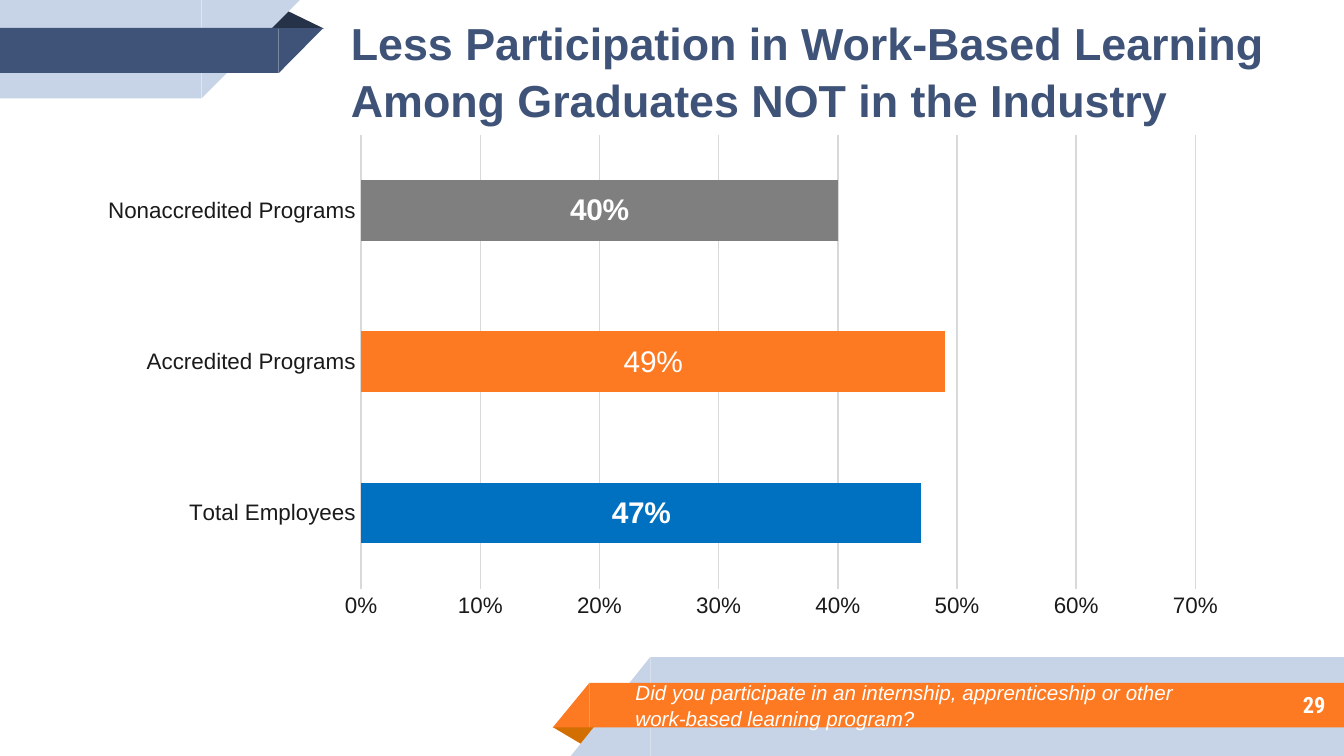
from lxml.etree import SubElement
from pptx import Presentation
from pptx.chart.data import CategoryChartData
from pptx.dml.color import RGBColor
from pptx.enum.chart import XL_CHART_TYPE as ChartType, XL_LABEL_POSITION as LabelPosition
from pptx.enum.chart import XL_TICK_MARK as TickMark
from pptx.enum.shapes import MSO_SHAPE as Preset
from pptx.enum.text import MSO_ANCHOR as Anchor, MSO_AUTO_SIZE as AutoSize, PP_ALIGN as Align
from pptx.oxml.ns import qn
from pptx.util import Cm, Pt

NAVY = RGBColor(0x3F, 0x53, 0x78)
DARK_NAVY = RGBColor(0x26, 0x32, 0x48)
PALE_BLUE = RGBColor(0xC7, 0xD3, 0xE6)
ORANGE = RGBColor(0xFD, 0x7A, 0x22)
DARK_ORANGE = RGBColor(0xD2, 0x6F, 0x00)
BLUE = RGBColor(0x00, 0x70, 0xC0)
GRAY = RGBColor(0x7F, 0x7F, 0x7F)
GRID = RGBColor(0xD9, 0xD9, 0xD9)
INK = RGBColor(0x1A, 0x1A, 0x1A)
WHITE = RGBColor(0xFF, 0xFF, 0xFF)

TITLE = "Less Participation in Work-Based Learning\vAmong Graduates NOT in the Industry"
QUESTION = "Did you participate in an internship, apprenticeship or other work-based learning program?"
PAGE_NUMBER = "29"
RESULTS = [
    ("Total Employees", 0.47, BLUE),
    ("Accredited Programs", 0.49, ORANGE),
    ("Nonaccredited Programs", 0.40, GRAY),
]
PLAIN_LABELS = {1: "49%"}
PLOT_LAYOUT = {"x": 0.24, "y": 0.02, "w": 0.72, "h": 0.9}

RECT, CORNER, FOLD = Preset.RECTANGLE, Preset.RIGHT_TRIANGLE, Preset.ISOSCELES_TRIANGLE
BOTTOM_RIBBON = [
    (FOLD, 10.44, 13.74, 0.89, 0.36, DARK_ORANGE, 180, False),
    (RECT, 12.29, 12.42, 13.11, 1.87, PALE_BLUE, 0, False),
    (CORNER, 10.79, 12.42, 1.5, 1.87, PALE_BLUE, 0, True),
    (RECT, 11.14, 12.91, 14.26, 0.84, ORANGE, 0, False),
    (CORNER, 10.45, 12.91, 0.69, 0.84, ORANGE, 0, True),
]
TOP_RIBBON = [
    (FOLD, 5.03, 0.18, 1.09, 0.36, DARK_NAVY, 0, False),
    (RECT, 0, 0, 3.81, 1.86, PALE_BLUE, 0, False),
    (CORNER, 3.81, 0, 1.86, 1.86, PALE_BLUE, 180, True),
    (RECT, 0, 0.53, 5.27, 0.85, NAVY, 0, False),
    (CORNER, 5.27, 0.53, 0.84, 0.85, NAVY, 180, True),
]


def place(shape, left, top, width, height):
    shape.left, shape.top, shape.width, shape.height = map(Cm, (left, top, width, height))


def set_font(font, color, **formats):
    font.color.rgb = color
    for name, value in formats.items():
        setattr(font, name, value)


def draw_ribbon(slide, pieces):
    group = slide.shapes.add_group_shape()
    for preset, left, top, width, height, color, rotation, flipped in pieces:
        shape = group.shapes.add_shape(preset, *map(Cm, (left, top, width, height)))
        shape.shadow.inherit = False
        shape.fill.solid()
        shape.fill.fore_color.rgb = color
        shape.line.fill.background()
        shape.rotation = rotation
        if flipped:
            shape.element.spPr.find(qn("a:xfrm")).set("flipH", "1")
        if preset == FOLD:
            shape.adjustments[0] = 0.32


def write_text(shape, text, color, align=Align.LEFT, spacing=1.0, **formats):
    frame = shape.text_frame
    frame_formats = {"word_wrap": True, "auto_size": AutoSize.NONE, "vertical_anchor": Anchor.MIDDLE}
    for side in ("left", "right", "top", "bottom"):
        frame_formats[f"margin_{side}"] = Cm(0.25)
    for name, value in frame_formats.items():
        setattr(frame, name, value)
    frame.text = text
    paragraph = frame.paragraphs[0]
    properties = paragraph._p.get_or_add_pPr()
    properties.set("marL", "0")
    properties.set("indent", "0")
    SubElement(properties, qn("a:buNone"))
    paragraph.alignment = align
    paragraph.space_before = Pt(0)
    paragraph.line_spacing = spacing
    for run in paragraph.runs:
        set_font(run.font, color, **formats)


def draw_chart(slide):
    data = CategoryChartData(number_format="0%")
    data.categories = [name for name, _, _ in RESULTS]
    data.add_series("Series 1", [value for _, value, _ in RESULTS])
    frame = slide.shapes.add_chart(
        ChartType.BAR_STACKED, *map(Cm, (1.57, 2.36, 21.9, 9.53)), data)
    chart = frame.chart
    chart.has_legend = chart.has_title = False
    set_font(chart.font, INK, size=Pt(10), name="Arial")

    plot = chart.plots[0]
    plot.gap_width, plot.overlap, plot.vary_by_categories = 150, 100, False
    series = plot.series[0]
    series.format.fill.solid()
    series.format.fill.fore_color.rgb = GRAY
    for index, (_, _, color) in enumerate(RESULTS):
        fill = series.points[index].format.fill
        fill.solid()
        fill.fore_color.rgb = color

    labels = series.data_labels
    labels.show_value = True
    labels.number_format, labels.number_format_is_linked = "0%", False
    labels.position = LabelPosition.CENTER
    set_font(labels.font, WHITE, size=Pt(16), bold=True, name="Arial")
    for index, text in PLAIN_LABELS.items():
        label = series.points[index].data_label
        label.text_frame.text = text
        label.position = LabelPosition.CENTER
        run = label.text_frame.paragraphs[0].runs[0]
        set_font(run.font, WHITE, size=Pt(16), bold=False, name="Arial")

    category_axis, value_axis = chart.category_axis, chart.value_axis
    for axis in (category_axis, value_axis):
        axis.major_tick_mark = axis.minor_tick_mark = TickMark.NONE
        set_font(axis.tick_labels.font, INK, size=Pt(12), name="Arial")
    category_axis.has_major_gridlines = False
    value_axis.has_major_gridlines = True
    for line in (category_axis.format.line, value_axis.major_gridlines.format.line):
        line.color.rgb, line.width = GRID, Pt(0.75)
    value_axis.format.line.fill.background()
    value_axis.minimum_scale, value_axis.maximum_scale, value_axis.major_unit = 0, 0.7, 0.1
    value_axis.tick_labels.number_format = "0%"
    value_axis.tick_labels.number_format_is_linked = False

    plot_area = chart.element.find(".//" + qn("c:plotArea"))
    for layout in plot_area.findall(qn("c:layout")):
        plot_area.remove(layout)
    layout = SubElement(plot_area, qn("c:layout"))
    plot_area.insert(0, layout)
    manual = SubElement(layout, qn("c:manualLayout"))
    settings = {"layoutTarget": "inner", "xMode": "edge", "yMode": "edge", **PLOT_LAYOUT}
    for name, value in settings.items():
        SubElement(manual, qn(f"c:{name}")).set("val", str(value))


def main():
    presentation = Presentation()
    presentation.slide_width, presentation.slide_height = Cm(25.4), Cm(14.29)
    slide = presentation.slides.add_slide(presentation.slide_layouts[1])
    title, question = slide.shapes.title, slide.placeholders[1]

    draw_ribbon(slide, BOTTOM_RIBBON)
    draw_ribbon(slide, TOP_RIBBON)

    slide.shapes._spTree.append(question.element)
    place(question, 11.76, 12.88, 11, 0.89)
    write_text(question, QUESTION, WHITE, spacing=1.05, size=Pt(11), italic=True, name="Arial")

    page_number = slide.shapes.add_textbox(*map(Cm, (21.16, 12.88, 4.14, 0.89)))
    write_text(page_number, PAGE_NUMBER, WHITE, Align.RIGHT,
               size=Pt(12), bold=True, name="Roboto Condensed")

    slide.shapes._spTree.append(title.element)
    place(title, 6.38, 0.25, 18.54, 2.13)
    write_text(title, TITLE, NAVY, spacing=1.05, size=Pt(24), bold=True, name="Arial")

    draw_chart(slide)
    presentation.save("out.pptx")


if __name__ == "__main__":
    main()
